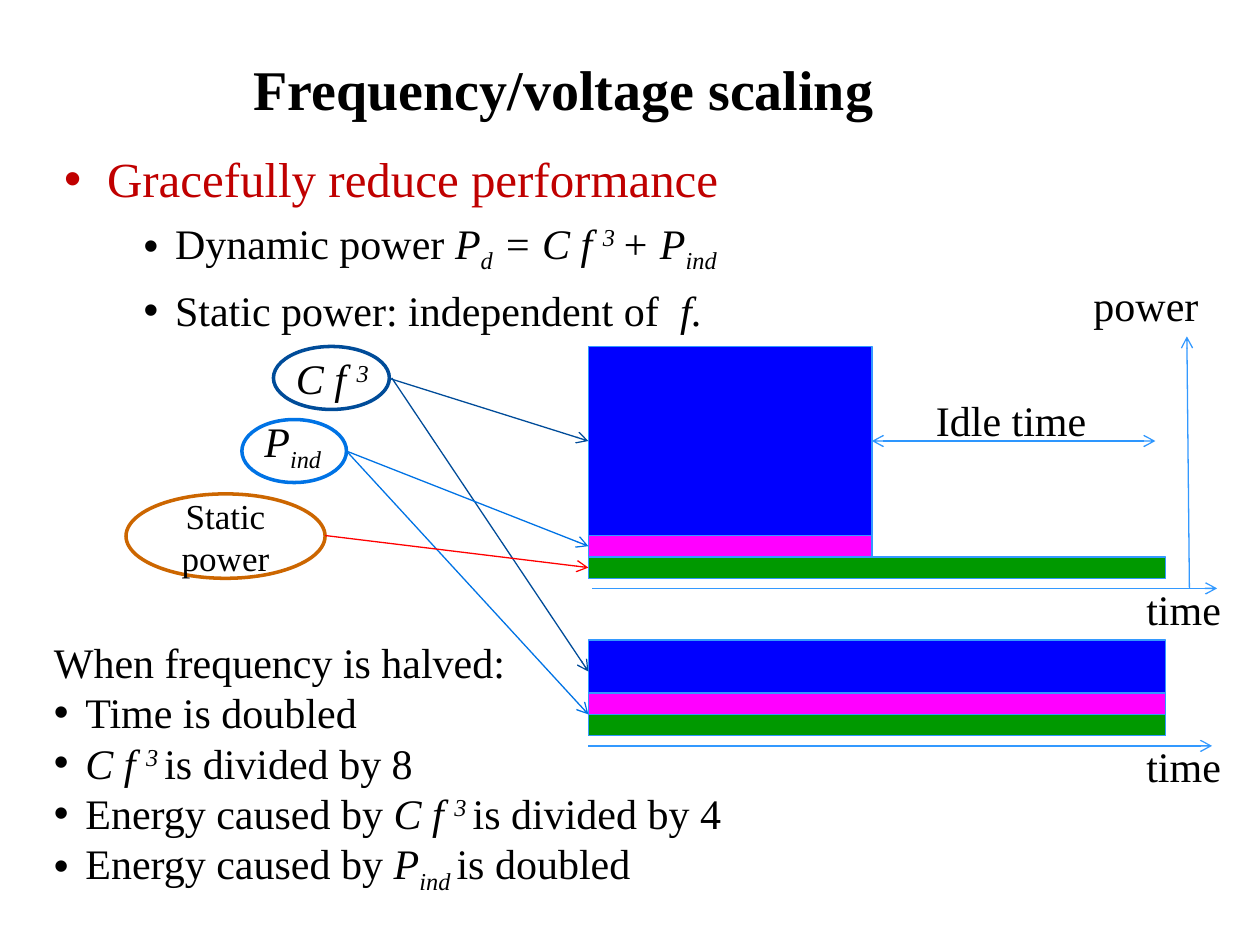
from lxml import etree
from pptx import Presentation
from pptx.dml.color import RGBColor
from pptx.enum.shapes import MSO_CONNECTOR, MSO_SHAPE
from pptx.enum.text import MSO_ANCHOR, PP_ALIGN
from pptx.oxml.ns import qn
from pptx.util import Cm, Pt

RECT, OVAL = MSO_SHAPE.RECTANGLE, MSO_SHAPE.OVAL
STRAIGHT = MSO_CONNECTOR.STRAIGHT
CENTER, LEFT = PP_ALIGN.CENTER, PP_ALIGN.LEFT
TOP, MIDDLE = MSO_ANCHOR.TOP, MSO_ANCHOR.MIDDLE

FONT = "Times New Roman"
BLACK = RGBColor(0x00, 0x00, 0x00)
CRIMSON = RGBColor(0xC0, 0x00, 0x00)
RED = RGBColor(0xFF, 0x00, 0x00)
BLUE = RGBColor(0x00, 0x00, 0xFF)
MAGENTA = RGBColor(0xFF, 0x00, 0xFF)
GREEN = RGBColor(0x00, 0x99, 0x00)
SKY = RGBColor(0x33, 0x99, 0xFF)
IDLE_BLUE = RGBColor(0x2D, 0x96, 0xFE)
NAVY = RGBColor(0x00, 0x4C, 0x99)
AZURE = RGBColor(0x00, 0x73, 0xE5)
ORANGE = RGBColor(0xCC, 0x66, 0x00)

ITALIC, SUB, SUP = "italic", "sub", "sup"
BASELINE = {SUB: "-25000", SUP: "30000"}
CF3 = [("C f ", ITALIC), ("3", SUP)]
CF3_SPACED = [("C f ", ITALIC), ("3 ", SUP)]

TITLE = [("Frequency/voltage scaling", None)]
BODY = [
    ([("Gracefully reduce performance", None)],
     dict(size=28, color=CRIMSON, indent=(0.34, 0.34))),
    ([("Dynamic power ", None), ("P", ITALIC), ("d", SUB), (" = ", ITALIC),
      *CF3_SPACED, ("+ P", ITALIC), ("ind", SUB)],
     dict(indent=(0.88, 0.25), before=5.6)),
    ([("Static power: independent of\u00a0 ", None), ("f.", ITALIC)],
     dict(indent=(0.88, 0.25), before=5.6)),
]
EFFECTS = [
    [("Time is doubled", None)],
    [*CF3_SPACED, ("is divided by 8", None)],
    [("Energy caused by ", None), *CF3_SPACED, ("is divided by 4", None)],
    [("Energy caused by ", None), ("P", ITALIC), ("ind ", SUB), ("is doubled", None)],
]
SUMMARY = [([("When frequency is halved:", None)], {})]
SUMMARY += [(runs, dict(indent=(0.25, 0.25))) for runs in EFFECTS]

BAR_LEFT, FULL, HALF, THIN = 4.67, 4.58, 2.25, 0.17
STACKS = {
    "full": (2.75, [(BLUE, HALF, 1.5), (MAGENTA, HALF, THIN), (GREEN, FULL, THIN)]),
    "halved": (5.08, [(BLUE, FULL, 0.42), (MAGENTA, FULL, THIN), (GREEN, FULL, THIN)]),
}
OVALS = [
    ((2.17, 2.75, 0.92, 0.5), NAVY),
    ((1.92, 3.33, 0.83, 0.5), AZURE),
    ((1, 3.92, 1.58, 0.67), ORANGE),
]
TO_BARS = [
    ((3.08, 3), NAVY, BLUE),
    ((2.75, 3.58), AZURE, MAGENTA),
    ((2.58, 4.25), RED, GREEN),
]
ARROWS = [
    ((9.44, 4.67), (9.42, 2.67), SKY),
    ((4.7, 4.67), (9.66, 4.67), SKY),
    ((4.67, 5.92), (9.62, 5.92), SKY),
    ((3.11, 3), (4.67, 5.33), NAVY),
    ((2.75, 3.58), (4.67, 5.67), AZURE),
]
LABELS = [
    ((8.58, 2.17, 1.04, 0.5), [("power", None)]),
    ((7.33, 3.08, 1.4, 0.5), [("Idle time", None)]),
    ((9, 4.58, 0.8, 0.5), [("time", None)]),
    ((9, 5.83, 0.8, 0.5), [("time", None)]),
    ((2.25, 2.75, 0.86, 0.5), CF3),
    ((2, 3.25, 0.69, 0.5), [("P", ITALIC), ("ind", SUB)]),
]


def inch(value):
    return Cm(value * 2.54)


def add_paragraph(p, runs, size=24, color=BLACK, bold=False, indent=None,
                  before=0, align=LEFT):
    p.alignment = align
    p.space_before = Pt(before)
    if indent:
        pPr = p._p.get_or_add_pPr()
        pPr.set("marL", str(inch(indent[0])))
        pPr.set("indent", str(-inch(indent[1])))
        etree.SubElement(pPr, qn("a:buFont")).set("typeface", "Arial")
        etree.SubElement(pPr, qn("a:buChar")).set("char", "•")
    for text, style in runs:
        r = p.add_run()
        r.text = text
        fmt = dict(name=FONT, size=Pt(size), bold=bold, italic=style is not None)
        for key, value in fmt.items():
            setattr(r.font, key, value)
        r.font.color.rgb = color
        if style in BASELINE:
            r._r.get_or_add_rPr().set("baseline", BASELINE[style])


def add_text(slide, box, paragraphs, **frame):
    tf = slide.shapes.add_textbox(*map(inch, box)).text_frame
    for key, value in frame.items():
        setattr(tf, key, value)
    for i, (runs, fmt) in enumerate(paragraphs):
        add_paragraph(tf.add_paragraph() if i else tf.paragraphs[0], runs, **fmt)


def add_shape(slide, kind, box, line, width, fill=None):
    s = slide.shapes.add_shape(kind, *map(inch, box))
    s.shadow.inherit = False
    if fill is None:
        s.fill.background()
    else:
        s.fill.solid()
        s.fill.fore_color.rgb = fill
    s.line.color.rgb = line
    s.line.width = Pt(width)
    return s


def add_arrow(slide, start, end, color, ends=("tailEnd",)):
    c = slide.shapes.add_connector(STRAIGHT, *map(inch, (*start, *end)))
    c.line.color.rgb = color
    c.line.width = Pt(0.75)
    ln = c.line._get_or_add_ln()
    for tag in ends:
        etree.SubElement(ln, qn(f"a:{tag}")).set("type", "arrow")
    etree.SubElement(c._element.spPr, qn("a:effectLst"))
    return c


def main():
    prs = Presentation()
    prs.slide_width, prs.slide_height = inch(10), inch(7.5)
    slide = prs.slides.add_slide(prs.slide_layouts[6])

    margins = dict(margin_left=inch(0.09), margin_right=inch(0.09),
                   margin_top=inch(0.1), vertical_anchor=TOP, word_wrap=True)
    add_text(slide, (0.75, 0.33, 7.45, 0.93),
             [(TITLE, dict(size=32, bold=True, align=CENTER))], **margins)
    add_text(slide, (0.42, 1.08, 8.83, 1.75), BODY, **margins)

    bars = {}
    for stack, (top, layers) in STACKS.items():
        for color, width, height in layers:
            box = (BAR_LEFT, top, width, height)
            bars[stack, color] = add_shape(slide, RECT, box, SKY, 0.75, color)
            top += height

    for box, color in OVALS:
        oval = add_shape(slide, OVAL, box, color, 2)
    tf = oval.text_frame
    tf.word_wrap = True
    tf.vertical_anchor = MIDDLE
    add_paragraph(tf.paragraphs[0], [("Static power", None)], size=20, align=CENTER)

    for start, end, color in ARROWS:
        add_arrow(slide, start, end, color)
    for start, color, layer in TO_BARS:
        add_arrow(slide, start, start, color).end_connect(bars["full", layer], 1)
    idle = add_arrow(slide, (6.92, 3.5), (9.17, 3.5), IDLE_BLUE, ("headEnd", "tailEnd"))
    idle.begin_connect(bars["full", BLUE], 3)

    for box, runs in LABELS:
        add_text(slide, box, [(runs, {})], word_wrap=False)
    add_text(slide, (0.33, 5, 5.57, 2.12), SUMMARY, word_wrap=False)

    prs.save("out.pptx")


if __name__ == "__main__":
    main()
